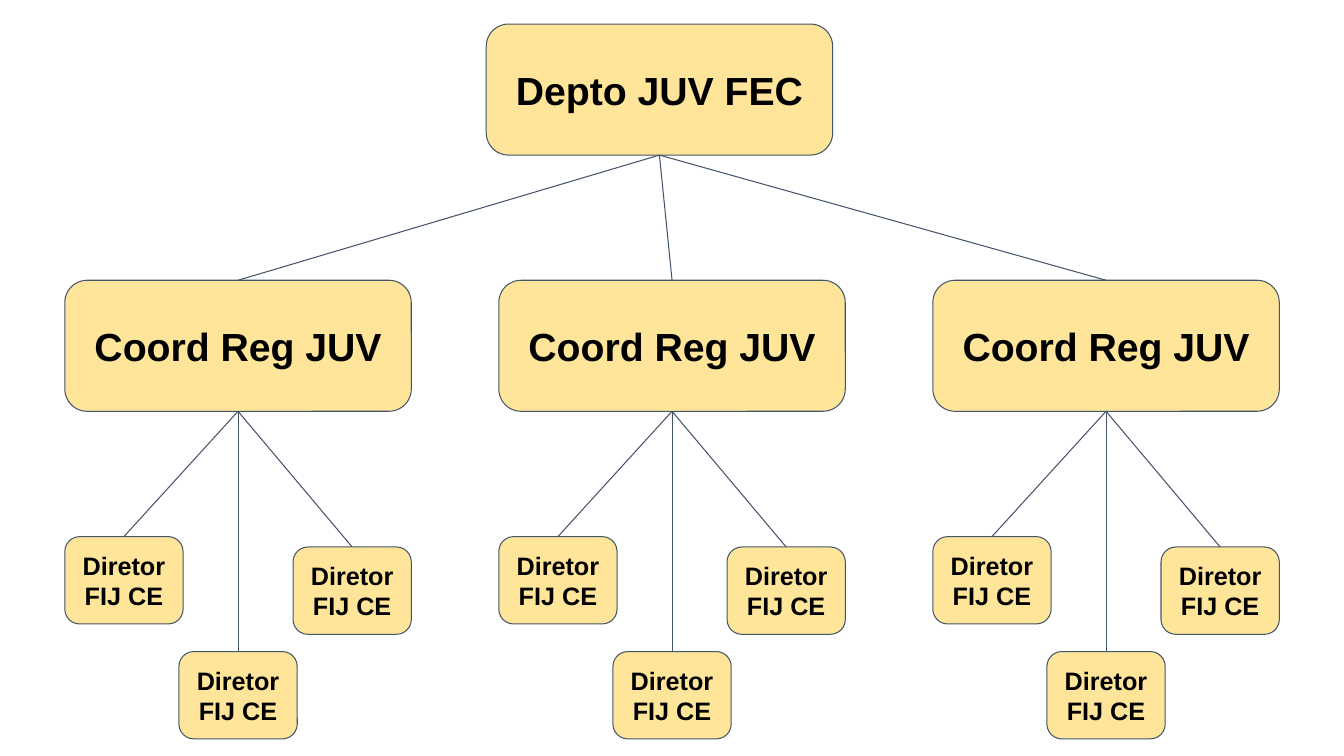
import pptx
import pptx.util
from pptx.dml.color import RGBColor
from pptx.enum.shapes import MSO_CONNECTOR, MSO_SHAPE
from pptx.enum.text import MSO_ANCHOR, PP_ALIGN
from pptx.oxml.ns import qn
from lxml import etree

Pt = pptx.util.Pt

# Content: department, its regional coordinations, their directors
DIRECTOR = ["Diretor", "FIJ CE"]
DEPARTMENT = ["Depto JUV FEC"]
REGIONS = [
    (["Coord Reg JUV"], [DIRECTOR, DIRECTOR, DIRECTOR]),
    (["Coord Reg JUV"], [DIRECTOR, DIRECTOR, DIRECTOR]),
    (["Coord Reg JUV"], [DIRECTOR, DIRECTOR, DIRECTOR]),
]

# Style
YELLOW = RGBColor(0xFF, 0xE5, 0x99)
SLATE = RGBColor(0x44, 0x54, 0x6A)
BLACK = RGBColor(0, 0, 0)
FONT = "Arial"
LINE_W = 0.75

# Layout in points
BIG_W, BIG_H, BIG_SIZE = 247.5, 93.6, 28
SMALL_W, SMALL_H, SMALL_SIZE = 84.5, 62.4, 18
DEPARTMENT_X, DEPARTMENT_Y = 347.3, 17.2
REGION_X, REGION_Y, REGION_STEP = 46.3, 200.2, 310
DIRECTOR_STEP = (BIG_W - SMALL_W) / 2
DIRECTOR_TOPS = [383.3, 465.4, 390.7]
INSET = 7.2

prs = pptx.Presentation()
prs.slide_width, prs.slide_height = Pt(960), Pt(540)
s = prs.slides.add_slide(prs.slide_layouts[6])


def add_box(lines, x, y, w, h, size):
    sp = s.shapes.add_shape(MSO_SHAPE.ROUNDED_RECTANGLE, Pt(x), Pt(y), Pt(w), Pt(h))
    sp.adjustments[0] = 0.17
    sp.shadow.inherit = False
    sp.fill.solid()
    sp.fill.fore_color.rgb = YELLOW
    sp.line.color.rgb = SLATE
    sp.line.width = Pt(LINE_W)
    tf = sp.text_frame
    tf.word_wrap = True
    tf.vertical_anchor = MSO_ANCHOR.MIDDLE
    tf.margin_left = tf.margin_right = tf.margin_top = tf.margin_bottom = Pt(INSET)
    for i, line in enumerate(lines):
        p = tf.add_paragraph() if i else tf.paragraphs[0]
        p.alignment = PP_ALIGN.CENTER
        r = p.add_run()
        r.text = line
        r.font.name = FONT
        r.font.size = Pt(size)
        r.font.bold = True
        r.font.color.rgb = BLACK
    return sp


def link(parent, child):
    """Join the parent's bottom centre to the child's top centre."""
    c = s.shapes.add_connector(MSO_CONNECTOR.STRAIGHT, 0, 0, 0, 0)
    c.begin_connect(parent, 2)
    c.end_connect(child, 0)
    c.line.color.rgb = SLATE
    c.line.width = Pt(LINE_W)
    etree.SubElement(c._element.spPr, qn("a:effectLst"))


# Boxes, level by level, with their links
department = add_box(DEPARTMENT, DEPARTMENT_X, DEPARTMENT_Y, BIG_W, BIG_H, BIG_SIZE)
for i, (name, directors) in enumerate(REGIONS):
    x = REGION_X + i * REGION_STEP
    region = add_box(name, x, REGION_Y, BIG_W, BIG_H, BIG_SIZE)
    link(department, region)
    for j, (lines, top) in enumerate(zip(directors, DIRECTOR_TOPS)):
        director = add_box(lines, x + j * DIRECTOR_STEP, top, SMALL_W, SMALL_H, SMALL_SIZE)
        link(region, director)

prs.save("out.pptx")
